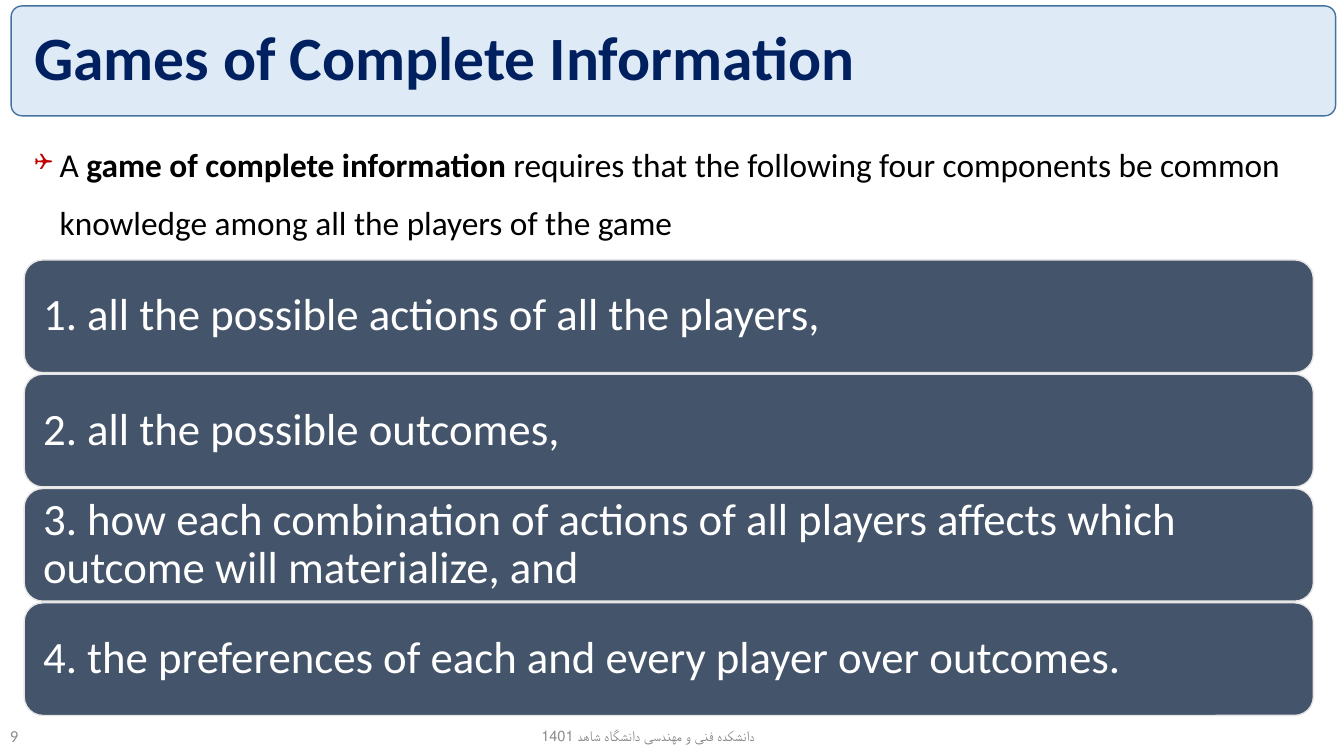
import pptx
import pptx.util
import pptx.dml.color
import pptx.enum.shapes
import pptx.enum.text
import lxml.etree
from pptx.util import Cm, Pt

COLORS = {
    "banner": "DEEBF7", "banner_line": "43739E", "title": "002060",
    "bullet": "C00000", "body": "000000", "card": "44546A",
    "card_line": "E7E6E6", "card_text": "FFFFFF", "footer": "8C8C8C",
}
ALIGN = pptx.enum.text.PP_ALIGN
MIDDLE = pptx.enum.text.MSO_ANCHOR.MIDDLE


def style_text(box, size, color, align=ALIGN.LEFT, bold=False, spacing=1.0):
    """Wrap the text of a box and format its first paragraph."""
    frame = box.text_frame
    frame.word_wrap = True
    frame.auto_size = pptx.enum.text.MSO_AUTO_SIZE.NONE
    para = frame.paragraphs[0]
    para.alignment = align
    para.line_spacing = spacing
    para.font.name = "Calibri"
    para.font.size = Pt(size)
    para.font.bold = bold
    para.font.color.rgb = pptx.dml.color.RGBColor.from_string(COLORS[color])
    return para


def add_panel(left, top, width, height, name):
    """Add a rounded panel with the fill and line colours of that name."""
    panel = page.shapes.add_shape(
        pptx.enum.shapes.MSO_SHAPE.ROUNDED_RECTANGLE,
        Cm(left), Cm(top), Cm(width), Cm(height))
    panel.shadow.inherit = False
    panel.fill.solid()
    panel.fill.fore_color.rgb = pptx.dml.color.RGBColor.from_string(COLORS[name])
    panel.line.color.rgb = pptx.dml.color.RGBColor.from_string(COLORS[name + "_line"])
    panel.line.width = Pt(1)
    return panel


deck = pptx.Presentation()
deck.slide_width, deck.slide_height = Cm(33.87), Cm(19.05)
page = deck.slides.add_slide(deck.slide_layouts[1])
title, body = page.placeholders

# Title on its banner
banner = add_panel(0.28, 0.15, 33.38, 2.77, "banner")
banner.adjustments[0] = 0.1
title.element.addprevious(banner.element)
title.left, title.top, title.width, title.height = Cm(0.61), Cm(0.38), Cm(32.41), Cm(2.29)
title.text_frame.text = "Games of Complete Information"
title.text_frame.vertical_anchor = MIDDLE
style_text(title, 44, "title", bold=True, spacing=0.9)

# Introduction with a box bullet
body.left, body.top, body.width, body.height = Cm(0.61), Cm(3.2), Cm(32.13), Cm(3.12)
para = style_text(body, 23.8, "body", spacing=1.3)
para.space_before = Pt(10)
for text in ("A ", "game of complete information ",
             "requires that the following four components be common "
             "knowledge among all the players of the game", " "):
    span = para.add_run()
    span.text = text
para.runs[1].font.bold = True
para.runs[3].font.size = Pt(27.2)

properties = para._p.get_or_add_pPr()
properties.set("marL", str(Cm(0.64)))
properties.set("indent", str(Cm(-0.64)))
bullet = lxml.etree.fromstring(
    '<a:b xmlns:a="http://schemas.openxmlformats.org/drawingml/2006/main">'
    f'<a:buClr><a:srgbClr val="{COLORS["bullet"]}"/></a:buClr>'
    '<a:buSzPct val="70000"/><a:buFont typeface="Wingdings"/><a:buChar char="❑"/></a:b>')
run_defaults = properties.find(pptx.oxml.ns.qn("a:defRPr"))
for part in list(bullet):
    run_defaults.addprevious(part)

# Four stacked component cards
components = [
    "all the possible actions of all the players,",
    "all the possible outcomes,",
    "how each combination of actions of all players affects which outcome "
    "will materialize, and",
    "the preferences of each and every player over outcomes.",
]
for index, component in enumerate(components):
    card = add_panel(0.61, 6.55 + index * 2.88, 32.49, 2.84, "card")
    frame = card.text_frame
    frame.text = f"{index + 1}. {component}"
    frame.vertical_anchor = MIDDLE
    frame.margin_left = frame.margin_right = Cm(0.34)
    frame.margin_top = frame.margin_bottom = Cm(0.34)
    style_text(card, 32, "card_text", spacing=0.9)

# Page number and footer
for left, width, size, align, text in (
        (0, 1.8, 12, ALIGN.LEFT, "9"),
        (10.62, 11.43, 10.5, ALIGN.CENTER, "دانشکده فنی و مهندسی دانشگاه شاهد 1401")):
    box = page.shapes.add_textbox(Cm(left), Cm(18.03), Cm(width), Cm(1.02))
    box.text_frame.text = text
    box.text_frame.vertical_anchor = MIDDLE
    style_text(box, size, "footer", align)

deck.save("out.pptx")
